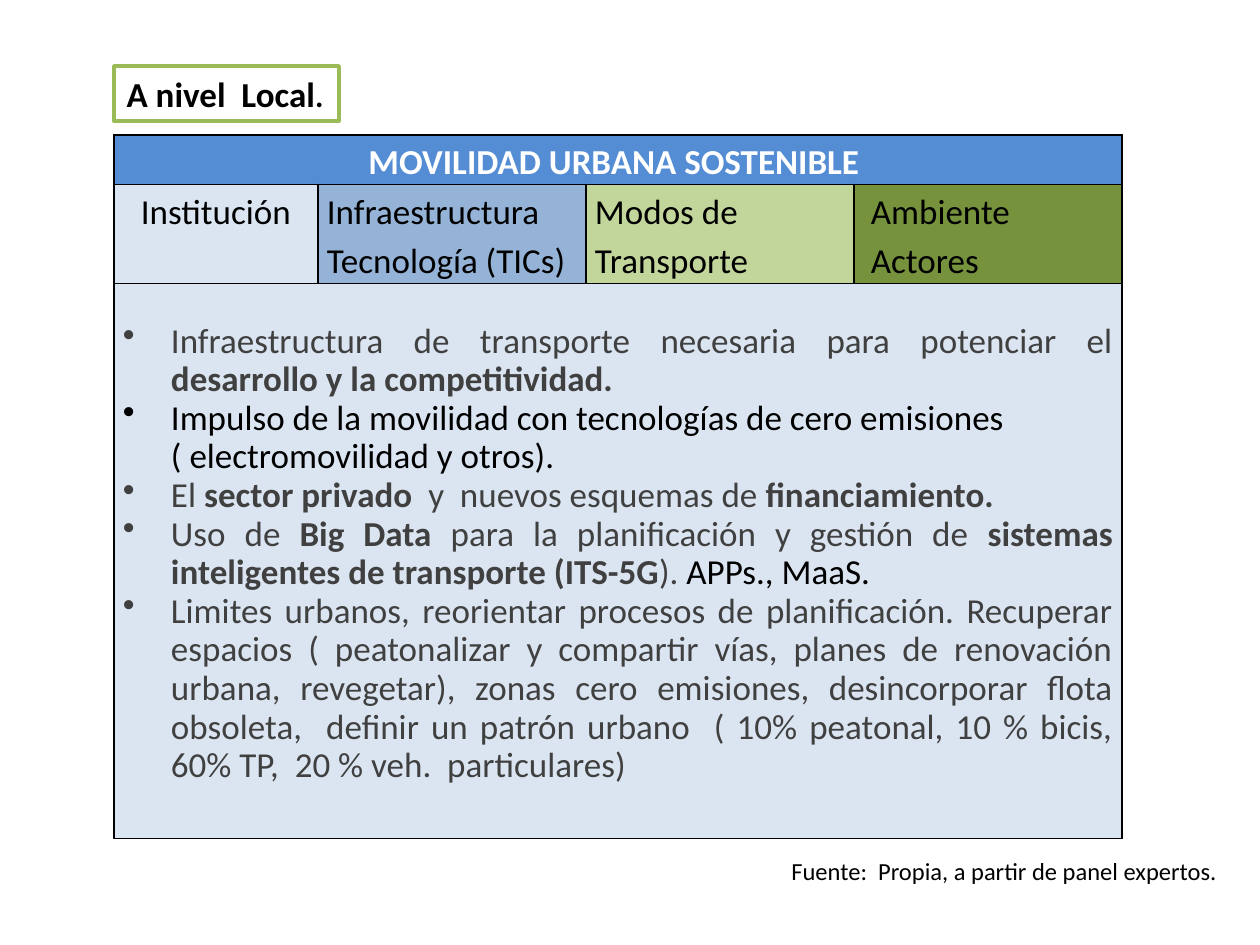
import pptx
import pptx.util
import pptx.dml.color
import pptx.enum.text
import pptx.oxml
import pptx.oxml.ns

PX = 914400 / 126
ALIGN = pptx.enum.text.PP_ALIGN
ANCHOR = pptx.enum.text.MSO_ANCHOR
HUES = {
    "white": "FFFFFF", "black": "000000", "gray": "404040", "blue": "548DD4",
    "pale": "DBE5F1", "sky": "95B3D7", "lime": "C2D69B", "olive": "76923C",
    "edge": "9BBB59",
}
HEADS = [
    (["Institución"], "pale", ALIGN.CENTER, 9),
    (["Infraestructura", "Tecnología (TICs)"], "sky", ALIGN.LEFT, 9),
    (["Modos de Transporte"], "lime", ALIGN.LEFT, 9),
    (["Ambiente", "Actores"], "olive", ALIGN.LEFT, 17),
]
POINTS = [
    (True, [("Infraestructura de transporte necesaria para potenciar el ", "gray", False),
            ("desarrollo y la competitividad.", "gray", True)]),
    (True, [("Impulso de la movilidad con tecnologías de cero emisiones", "black", False)]),
    (False, [("( electromovilidad y otros).", "black", False)]),
    (True, [("El ", "gray", False), ("sector privado  ", "gray", True),
            ("y  nuevos esquemas de ", "gray", False),
            ("financiamiento.", "gray", True)]),
    (True, [("Uso de ", "gray", False), ("Big Data ", "gray", True),
            ("para la planificación y gestión de ", "gray", False),
            ("sistemas inteligentes de transporte (ITS-5G", "gray", True),
            (").", "gray", False), (" APPs., MaaS.", "black", False)]),
    (True, [("Limites urbanos, reorientar procesos de planificación. Recuperar "
             "espacios ( peatonalizar y compartir vías, planes de renovación "
             "urbana, revegetar), zonas cero emisiones, desincorporar flota "
             "obsoleta,  definir un patrón urbano  ( 10% peatonal, 10 % bicis, "
             "60% TP,  20 % veh.  particulares)", "gray", False)]),
]


def px(n):
    return pptx.util.Emu(round(n * PX))


def hue(name):
    return pptx.dml.color.RGBColor.from_string(HUES[name])


def style(run, size, color, bold=False):
    run.font.name = "Calibri"
    run.font.size = pptx.util.Pt(size)
    run.font.bold = bold
    run.font.color.rgb = hue(color)


def fill(para, runs, size=20):
    for text, color, bold in runs:
        run = para.add_run()
        run.text = text
        style(run, size, color, bold)


def indent(para, mark):
    props = para._p.get_or_add_pPr()
    props.set("marL", str(px(48)))
    props.set("indent", str(-px(48) if mark else 0))
    if mark:
        bullet = props.makeelement(pptx.oxml.ns.qn("a:buChar"), {"char": "•"})
        props.append(bullet)


def paint(cell, color, left=9, top=0):
    props = cell._tc.get_or_add_tcPr()
    for side in "LRTB":
        props.append(pptx.oxml.parse_xml(
            f'<a:ln{side} {pptx.oxml.ns.nsdecls("a")} w="12700"><a:solidFill>'
            f'<a:srgbClr val="{HUES["black"]}"/></a:solidFill></a:ln{side}>'))
    cell.fill.solid()
    cell.fill.fore_color.rgb = hue(color)
    cell.margin_left, cell.margin_right = px(left), px(9)
    cell.margin_top, cell.margin_bottom = px(top), 0
    cell.vertical_anchor = ANCHOR.TOP


def write(cell, lines, align, color, bold=False):
    cell.text_frame.text = "\n".join(lines)
    for para in cell.text_frame.paragraphs:
        para.alignment = align
        para.line_spacing = 1.15
        style(para.runs[0], 20, color, bold)


def list_points(cell):
    frame = cell.text_frame
    for i, (mark, runs) in enumerate(POINTS):
        para = frame.add_paragraph() if i else frame.paragraphs[0]
        para.alignment = ALIGN.JUSTIFY
        para.line_spacing = 0.9
        indent(para, mark)
        fill(para, runs)


def add_grid(slide, x, y):
    wides, highs = [204, 268, 268, 268], [49, 99, 555]
    grid = slide.shapes.add_table(
        3, 4, px(x), px(y), px(sum(wides)), px(sum(highs))).table
    grid.first_row = grid.horz_banding = False
    for col, wide in zip(grid.columns, wides):
        col.width = px(wide)
    for row, high in zip(grid.rows, highs):
        row.height = px(high)
    for c, (lines, color, align, left) in enumerate(HEADS):
        paint(grid.cell(0, c), "blue")
        paint(grid.cell(1, c), color, left)
        paint(grid.cell(2, c), "pale", top=39)
        write(grid.cell(1, c), lines, align, "black")
    for r in (0, 2):
        grid.cell(r, 0).merge(grid.cell(r, 3))
    write(grid.cell(0, 0), ["MOVILIDAD URBANA SOSTENIBLE "], ALIGN.CENTER, "white", True)
    list_points(grid.cell(2, 0))


def place(shape, x, y, wide, high):
    shape.left, shape.top, shape.width, shape.height = map(px, (x, y, wide, high))


def add_title(slide, x, y, wide, high):
    title = slide.shapes.title
    place(title, x, y, wide, high)
    title.fill.solid()
    title.fill.fore_color.rgb = hue("white")
    title.line.color.rgb = hue("edge")
    title.line.width = pptx.util.Pt(2)
    frame = title.text_frame
    frame.word_wrap = False
    frame.auto_size = pptx.enum.text.MSO_AUTO_SIZE.NONE
    frame.vertical_anchor = ANCHOR.TOP
    para = frame.paragraphs[0]
    para.alignment = ALIGN.LEFT
    fill(para, [("A nivel  Local", "black", True)])
    fill(para, [(".", "black", True)], 18)


def add_source(slide, x, y, wide, high):
    box = slide.shapes.add_textbox(px(x), px(y), px(wide), px(high))
    frame = box.text_frame
    frame.word_wrap = False
    frame.text = "Fuente:  Propia, a partir de panel expertos."
    style(frame.paragraphs[0].runs[0], 14, "black")


def main():
    deck = pptx.Presentation()
    deck.slide_width, deck.slide_height = px(1260), px(945)
    slide = deck.slides.add_slide(deck.slide_layouts[5])
    add_grid(slide, 114, 135)
    add_source(slide, 779, 850, 455, 43)
    add_title(slide, 114, 66, 225, 55)
    deck.save("out.pptx")


if __name__ == "__main__":
    main()
